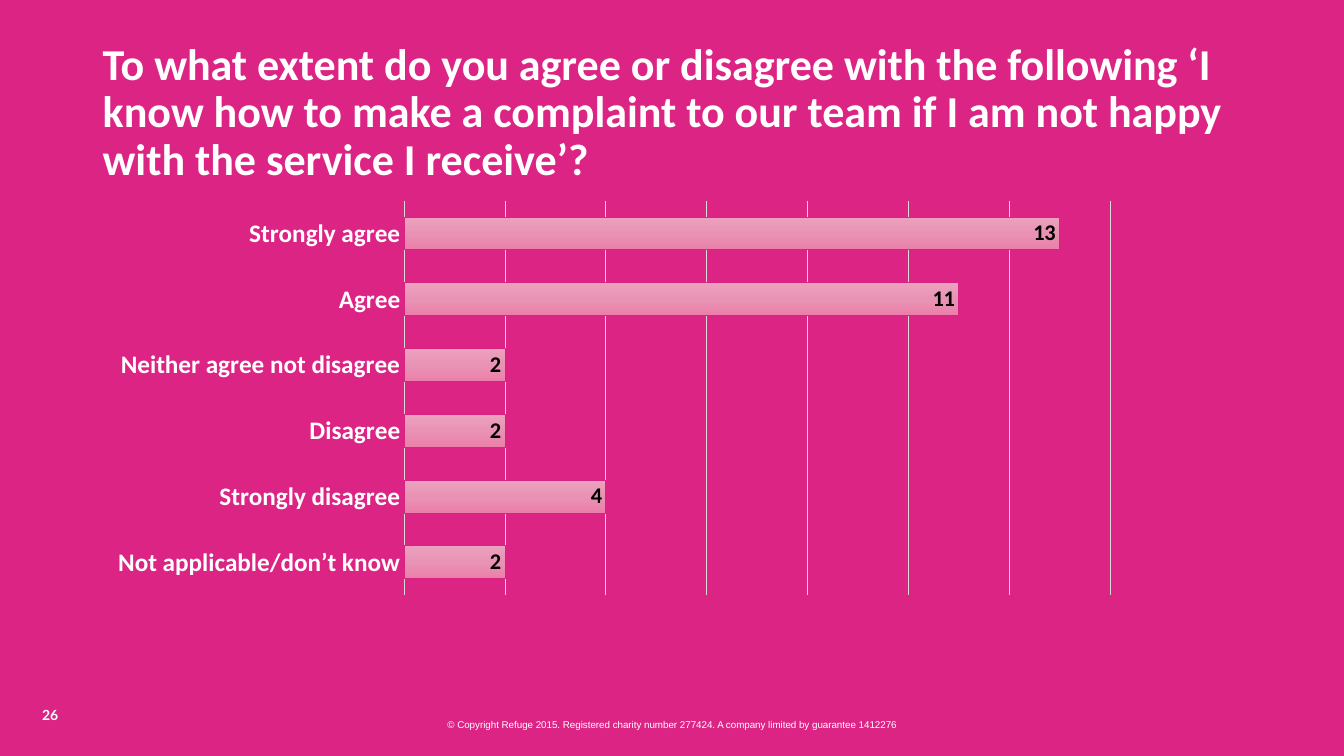
from copy import deepcopy
from dataclasses import dataclass

from lxml import etree
from pptx import Presentation
from pptx.chart.data import CategoryChartData
from pptx.dml.color import RGBColor
from pptx.enum.chart import XL_CHART_TYPE, XL_LABEL_POSITION, XL_TICK_MARK
from pptx.enum.text import MSO_ANCHOR, PP_ALIGN
from pptx.oxml.ns import qn
from pptx.util import Cm, Pt


@dataclass(frozen=True)
class Theme:
    background: str = "DC2485"
    light: str = "FFFFFF"
    dark: str = "000000"
    grid: str = "D9D9D9"
    bar_edge: str = "D72382"
    bar_gradient: tuple = ("EDA1BF", "E993B4", "EB7FAA")
    body_font: str = "Calibri"
    number_font: str = "Lato"
    footer_font: str = "Arial"
    title_size: float = 31.5
    category_size: float = 18
    value_size: float = 16
    number_size: float = 10
    footer_size: float = 7
    hairline: float = 0.75


def style_font(font, name, size, color, bold=True):
    font.name = name
    font.size = Pt(size)
    font.bold = bold
    font.color.rgb = RGBColor.from_string(color)


class SurveySlide:
    def __init__(self, presentation, theme):
        self.theme = theme
        self.slide = presentation.slides.add_slide(presentation.slide_layouts[6])
        fill = self.slide.background.fill
        fill.solid()
        fill.fore_color.rgb = RGBColor.from_string(theme.background)

    def add_text(self, text, box, font_name, size, bold=True,
                 align=PP_ALIGN.LEFT, anchor=MSO_ANCHOR.TOP, line_spacing=1.0):
        frame = self.slide.shapes.add_textbox(*map(Cm, box)).text_frame
        frame.word_wrap = True
        frame.vertical_anchor = anchor
        frame.text = text
        paragraph = frame.paragraphs[0]
        paragraph.alignment = align
        paragraph.line_spacing = line_spacing
        style_font(paragraph.runs[0].font, font_name, size, self.theme.light, bold)

    def add_bar_chart(self, answers, box, plot_area):
        """Draw answers from top to bottom; plot_area holds fractions of the chart."""
        theme = self.theme
        data = CategoryChartData()
        data.categories = list(reversed(answers))
        data.add_series("Series 1", list(reversed(answers.values())))
        chart = self.slide.shapes.add_chart(
            XL_CHART_TYPE.BAR_CLUSTERED, *map(Cm, box), data).chart
        chart.has_legend = False
        chart.has_title = False
        style_font(chart.font, theme.body_font, theme.value_size, theme.light)
        self.place_plot(chart, plot_area)

        categories = chart.category_axis
        categories.major_tick_mark = XL_TICK_MARK.NONE
        categories.minor_tick_mark = XL_TICK_MARK.NONE
        style_font(categories.tick_labels.font, theme.body_font,
                   theme.category_size, theme.light)
        self.style_line(categories.format.line, theme.grid)

        counts = chart.value_axis
        counts.visible = False
        counts.minimum_scale, counts.maximum_scale, counts.major_unit = 0, 14, 2
        counts.has_major_gridlines = True
        self.style_line(counts.major_gridlines.format.line, theme.grid)

        plot = chart.plots[0]
        plot.gap_width = 100
        plot.vary_by_categories = False
        bars = plot.series[0]
        self.fill_gradient(bars)
        self.style_line(bars.format.line, theme.bar_edge)
        labels = bars.data_labels
        labels.show_value = True
        labels.position = XL_LABEL_POSITION.INSIDE_END
        style_font(labels.font, theme.body_font, theme.value_size, theme.dark)

    def style_line(self, line, color):
        line.color.rgb = RGBColor.from_string(color)
        line.width = Pt(self.theme.hairline)

    def fill_gradient(self, series):
        """Shade the bars from top to bottom with evenly spaced theme colours."""
        fill = series.format.fill
        fill.gradient()
        fill.gradient_angle = 270
        colors = self.theme.bar_gradient
        stop_list = next(series._element.iter(qn("a:gsLst")))
        while len(stop_list) < len(colors):
            stop_list.append(deepcopy(stop_list[0]))
        for index, (stop, color) in enumerate(zip(fill.gradient_stops, colors)):
            stop.position = index / (len(colors) - 1)
            stop.color.rgb = RGBColor.from_string(color)

    @staticmethod
    def place_plot(chart, plot_area):
        area = chart._chartSpace.chart.plotArea
        for old_layout in area.findall(qn("c:layout")):
            area.remove(old_layout)
        layout = etree.Element(qn("c:layout"))
        manual = etree.SubElement(layout, qn("c:manualLayout"))
        settings = [("layoutTarget", "inner"), ("xMode", "edge"), ("yMode", "edge")]
        settings += zip("xywh", map(str, plot_area))
        for tag, value in settings:
            etree.SubElement(manual, qn(f"c:{tag}")).set("val", value)
        area.insert(0, layout)


def main():
    theme = Theme()
    presentation = Presentation()
    presentation.slide_width = Cm(33.87)
    presentation.slide_height = Cm(19.05)
    survey = SurveySlide(presentation, theme)

    survey.add_text(
        "© Copyright Refuge 2015. Registered charity number 277424. "
        "A company limited by guarantee 1412276",
        (0, 17.98, 33.87, 0.56), theme.footer_font, theme.footer_size,
        bold=False, align=PP_ALIGN.CENTER)
    survey.add_text("26", (0.81, 17.68, 7.62, 1.02),
                    theme.number_font, theme.number_size)
    survey.add_bar_chart(
        {
            "Strongly agree": 13,
            "Agree": 11,
            "Neither agree not disagree": 2,
            "Disagree": 2,
            "Strongly disagree": 4,
            "Not applicable/don’t know": 2,
        },
        box=(2.34, 4.85, 26.16, 10.36), plot_area=(0.3, 0.02, 0.68, 0.96))
    survey.add_text(
        "To what extent do you agree or disagree with the following ‘I know how "
        "to make a complaint to our team if I am not happy with the service I receive’?",
        (2.34, 1.02, 29.59, 3.68), theme.body_font, theme.title_size,
        anchor=MSO_ANCHOR.MIDDLE, line_spacing=0.9)
    presentation.save("out.pptx")


if __name__ == "__main__":
    main()
